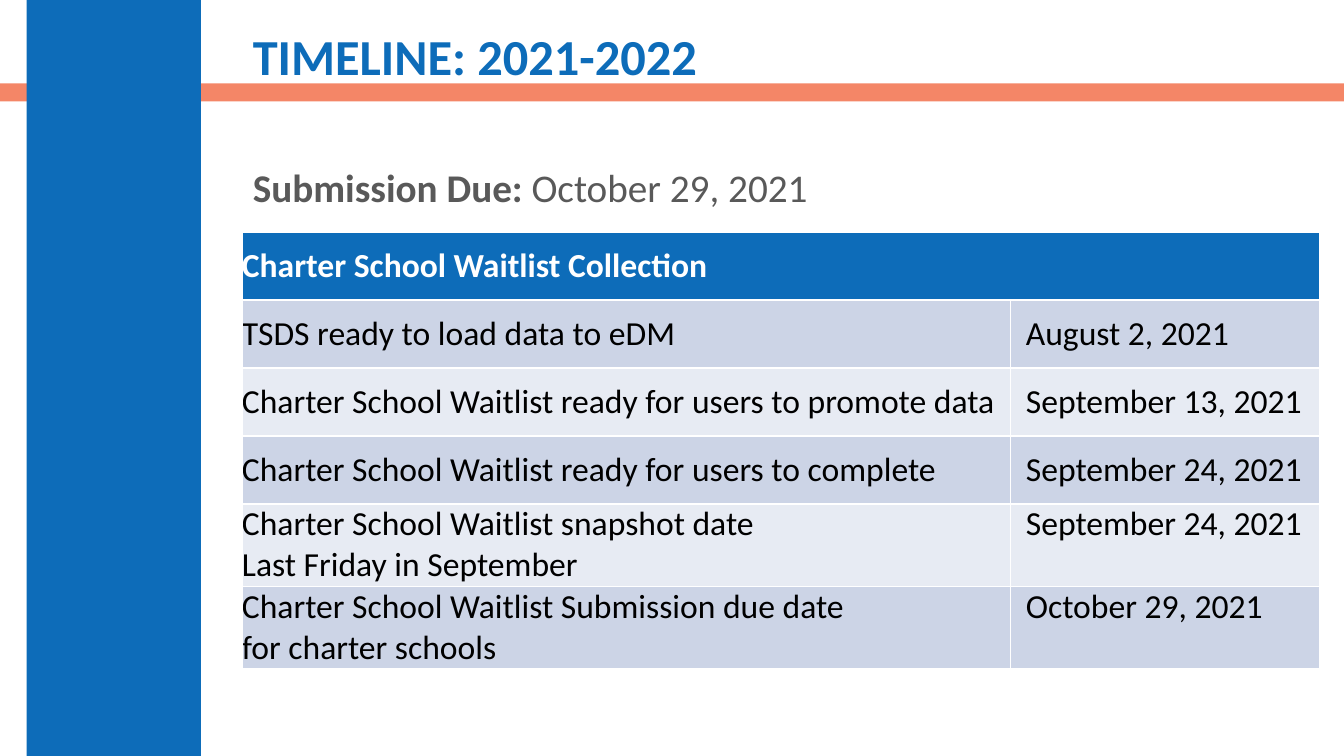
"""Build the charter school waitlist timeline slide."""
from lxml import etree
from pptx import Presentation
from pptx import util as u
from pptx.dml import color
from pptx.enum import shapes, text
from pptx.oxml import ns

BLUE = "0D6CB9"


def rgb(value):
    return color.RGBColor.from_string(value)


def style(paragraph, size, ink, bold):
    for span in paragraph.runs:
        span.font.name = "Calibri"
        span.font.size = u.Pt(size)
        span.font.bold = bold
        span.font.color.rgb = rgb(ink)


deck = Presentation()
deck.slide_width, deck.slide_height = u.Pt(960), u.Pt(540)
page = deck.slides.add_slide(deck.slide_layouts[6])

bars = [(0, 59.6, 960, 12.8, "F16038", 76), (19, 0, 124.6, 540, BLUE, 100)]
for left, top, width, height, fill, opacity in bars:
    bar = page.shapes.add_shape(
        shapes.MSO_SHAPE.RECTANGLE, u.Pt(left), u.Pt(top), u.Pt(width), u.Pt(height))
    bar.shadow.inherit = False
    bar.line.fill.background()
    bar.fill.solid()
    bar.fill.fore_color.rgb = rgb(fill)
    if opacity < 100:
        tint = bar.fill._xPr.find(".//" + ns.qn("a:srgbClr"))
        etree.SubElement(tint, ns.qn("a:alpha"), val=str(opacity * 1000))

headings = [
    (13, 758, 59, text.MSO_ANCHOR.MIDDLE, 36, BLUE, ["TIMELINE: 2021-2022"]),
    (116.6, 708, 342.7, text.MSO_ANCHOR.TOP, 28, "595959",
     ["Submission Due: ", "October 29, 2021"]),
]
for top, width, height, anchor, size, ink, spans in headings:
    box = page.shapes.add_textbox(u.Pt(173.5), u.Pt(top), u.Pt(width), u.Pt(height))
    frame = box.text_frame
    frame.word_wrap = True
    frame.vertical_anchor = anchor
    para = frame.paragraphs[0]
    para.line_spacing = 0.9
    for words in spans:
        para.add_run().text = words
    style(para, size, ink, True)
    for span in para.runs[1:]:
        span.font.bold = False

rows = [
    ("Charter School Waitlist Collection", ""),
    ("TSDS ready to load data to eDM", "August 2, 2021"),
    ("Charter School Waitlist ready for users to promote data", "September 13, 2021"),
    ("Charter School Waitlist ready for users to complete", "September 24, 2021"),
    ("Charter School Waitlist snapshot date\nLast Friday in September",
     "September 24, 2021"),
    ("Charter School Waitlist Submission due date\nfor charter schools",
     "October 29, 2021"),
]
table = page.shapes.add_table(
    len(rows), 2, u.Pt(172.8), u.Pt(165.7), u.Pt(770), u.Pt(311.6)).table
table.columns[0].width, table.columns[1].width = u.Pt(549), u.Pt(221)
table.cell(0, 0).merge(table.cell(0, 1))

for index, (event, date) in enumerate(rows):
    header = index == 0
    two_lines = "\n" in event
    table.rows[index].height = u.Pt(58.6 if two_lines else 48.6)
    fill = BLUE if header else ("E7EBF3", "CCD4E6")[index % 2]
    for column, words in enumerate((event, date)):
        cell = table.cell(index, column)
        cell.fill.solid()
        cell.fill.fore_color.rgb = rgb(fill)
        cell.margin_left = u.Pt(11 * column)
        cell.margin_top = cell.margin_right = cell.margin_bottom = u.Pt(0)
        cell.vertical_anchor = text.MSO_ANCHOR.TOP if two_lines else text.MSO_ANCHOR.MIDDLE
        if words:
            cell.text_frame.text = words
        for para in cell.text_frame.paragraphs:
            style(para, 24, "FFFFFF" if header else "000000", header)

deck.save("out.pptx")
